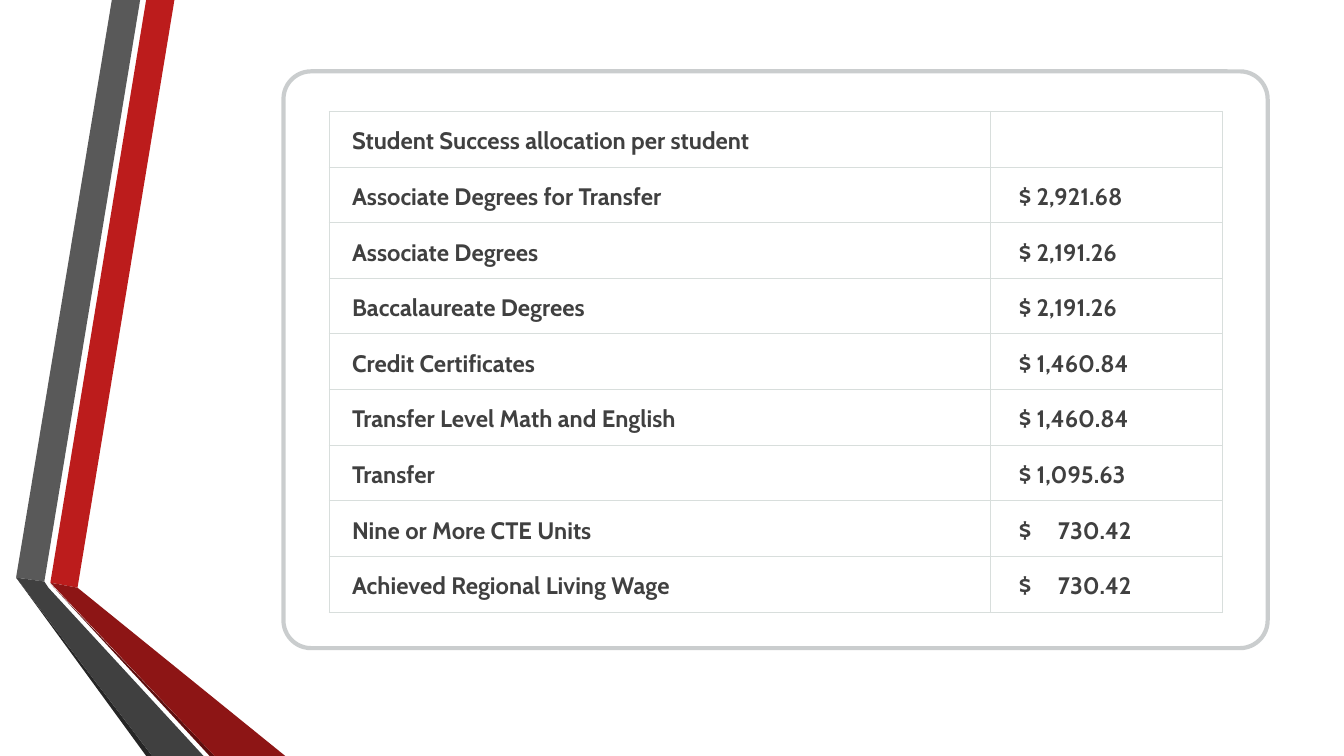
import pptx
import pptx.dml.color
import pptx.enum.shapes
import pptx.enum.text
import pptx.oxml
import pptx.oxml.ns
import pptx.util

Pt = pptx.util.Pt
NAMESPACE = pptx.oxml.ns.nsdecls("a")

# Ribbon facets from back to front: colour and corners in points
RIBBON_FACETS = [
    ("BC1C1C", [(36, 416.2), (55.4, 419.8), (124.6, 0), (104.4, 0)]),
    ("595959", [(100.1, 0), (79.9, 0), (11.5, 412.6), (31.7, 415.4)]),
    ("262626", [(11.5, 412.6), (104.4, 540), (108.7, 540)]),
    ("5E0E0E", [(36, 416.9), (149.8, 540), (153.4, 540)]),
    ("8D1515", [(36, 416.2), (153.4, 540), (203.8, 540), (55.4, 419.8)]),
    ("404040", [(145.4, 540), (34.6, 419.8), (31.7, 415.4),
                (11.5, 412.6), (108.7, 540)]),
]

ALLOCATIONS = [
    ("Student Success allocation per student", ""),
    ("Associate Degrees for Transfer", "$ 2,921.68"),
    ("Associate Degrees", "$ 2,191.26"),
    ("Baccalaureate Degrees", "$ 2,191.26"),
    ("Credit Certificates", "$ 1,460.84"),
    ("Transfer Level Math and English", "$ 1,460.84"),
    ("Transfer", "$ 1,095.63"),
    ("Nine or More CTE Units", "$\t730.42"),
    ("Achieved Regional Living Wage", "$\t730.42"),
]


def color(value):
    return pptx.dml.color.RGBColor.from_string(value)


def set_attributes(target, values):
    for name, value in values.items():
        setattr(target, name, value)


class SlideBuilder:
    font_format = {"name": "Cabin", "size": Pt(17), "bold": True}
    text_color = "404040"
    border_color = "D8DEDC"
    border_width = 0.75
    amount_tab = 28

    def __init__(self, slide):
        self.slide = slide

    def facet(self, fill, corners):
        points = [(Pt(x), Pt(y)) for x, y in corners]
        builder = self.slide.shapes.build_freeform(*points[0])
        builder.add_line_segments(points[1:], close=True)
        shape = builder.convert_to_shape()
        shape.shadow.inherit = False
        shape.fill.solid()
        shape.fill.fore_color.rgb = color(fill)
        shape.line.fill.background()

    def frame(self, left, top, width, height, rounding):
        shape = self.slide.shapes.add_shape(
            pptx.enum.shapes.MSO_SHAPE.ROUNDED_RECTANGLE,
            Pt(left), Pt(top), Pt(width), Pt(height))
        shape.adjustments[0] = rounding
        shape.shadow.inherit = False
        shape.fill.solid()
        shape.fill.fore_color.rgb = color("FFFFFF")
        shape.line.width = Pt(3)
        shape.line.color.rgb = color("979D9F")
        # Half-transparent outline
        line_color = shape.line._get_or_add_ln().find(
            ".//" + pptx.oxml.ns.qn("a:srgbClr"))
        line_color.append(pptx.oxml.parse_xml(
            f'<a:alpha {NAMESPACE} val="50000"/>'))

    def table(self, left, top, widths, row_height, rows):
        table = self.slide.shapes.add_table(
            len(rows), len(widths), Pt(left), Pt(top),
            Pt(sum(widths)), Pt(row_height * len(rows))).table
        set_attributes(table, {"first_row": False, "horz_banding": False})
        for column, width in zip(table.columns, widths):
            column.width = Pt(width)
        for row, texts in zip(table.rows, rows):
            row.height = Pt(row_height)
            for cell, text, indent in zip(row.cells, texts, (16.5, 20.5)):
                self.cell(cell, text, indent)

    def cell(self, cell, text, indent):
        set_attributes(cell, {
            "margin_left": Pt(indent), "margin_right": Pt(2),
            "margin_top": Pt(8), "margin_bottom": Pt(8),
            "vertical_anchor": pptx.enum.text.MSO_ANCHOR.BOTTOM})
        # Borders come before the fill in the cell properties
        properties = cell._tc.get_or_add_tcPr()
        for side in "LRTB":
            properties.append(pptx.oxml.parse_xml(
                f'<a:ln{side} {NAMESPACE} w="{Pt(self.border_width)}">'
                f'<a:solidFill><a:srgbClr val="{self.border_color}"/>'
                f'</a:solidFill></a:ln{side}>'))
        cell.fill.background()
        paragraph = cell.text_frame.paragraphs[0]
        set_attributes(paragraph.font, self.font_format)
        if not text:
            return
        run = paragraph.add_run()
        run.text = text
        set_attributes(run.font, self.font_format)
        run.font.color.rgb = color(self.text_color)
        if "\t" in text:
            paragraph._p.get_or_add_pPr().insert(0, pptx.oxml.parse_xml(
                f'<a:tabLst {NAMESPACE}><a:tab pos="{Pt(self.amount_tab)}"'
                ' algn="l"/></a:tabLst>'))


def main():
    presentation = pptx.Presentation()
    set_attributes(presentation, {"slide_width": Pt(960),
                                  "slide_height": Pt(540)})
    slide = presentation.slides.add_slide(presentation.slide_layouts[6])
    builder = SlideBuilder(slide)

    # Folded ribbon on the left
    for fill, corners in RIBBON_FACETS:
        builder.facet(fill, corners)

    # Framed allocation table
    builder.frame(202.5, 51, 703, 412, 0.048)
    builder.table(235, 79.5, (472.25, 165.75), 39.75, ALLOCATIONS)

    presentation.save("out.pptx")


if __name__ == "__main__":
    main()
